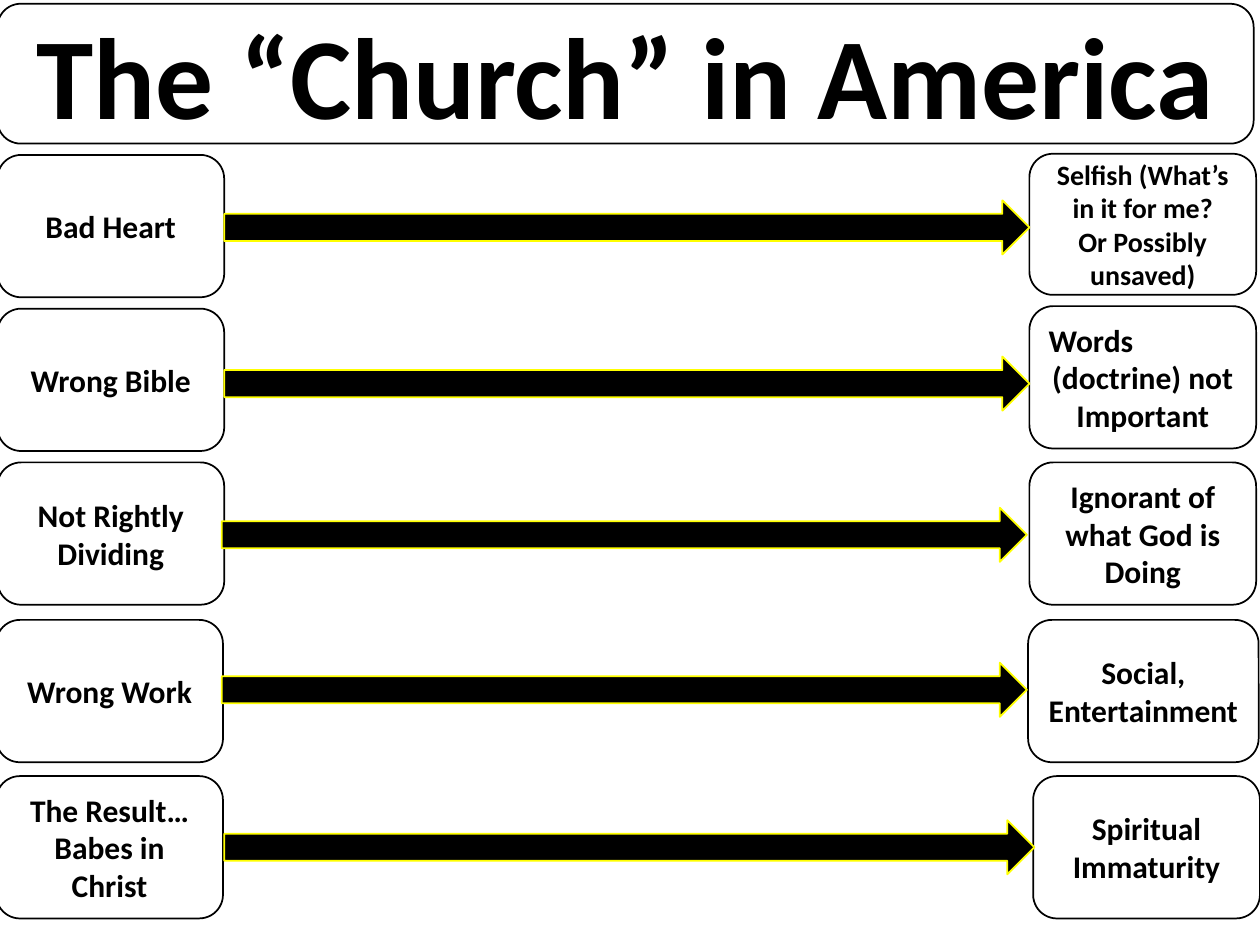
from dataclasses import dataclass

import pptx
import pptx.dml.color
import pptx.enum.shapes
import pptx.enum.text
import pptx.util
from pptx.util import Inches

Align = pptx.enum.text.PP_ALIGN
Preset = pptx.enum.shapes.MSO_SHAPE


@dataclass(frozen=True)
class Theme:
    font: str = "Calibri"
    ink: str = "000000"
    arrow_edge: str = "FFFF00"
    line_width: float = 1
    title_size: float = 66
    label_size: float = 18
    small_size: float = 16


@dataclass(frozen=True)
class Line:
    """One paragraph of a box."""
    text: str
    align: Align = Align.CENTER


@dataclass(frozen=True)
class Box:
    left: float
    top: float
    lines: tuple[Line, ...]
    size: float
    width: float = 1.8
    height: float = 1.13


@dataclass(frozen=True)
class Arrow:
    left: float
    top: float
    width: float = 6.39
    height: float = 0.43


@dataclass(frozen=True)
class Row:
    cause: Box
    arrow: Arrow
    effect: Box


THEME = Theme()


def label(left: float, top: float, *texts: str, width: float = 1.8) -> Box:
    return Box(left, top, tuple(Line(text) for text in texts), THEME.label_size, width)


TITLE = Box(-0.02, 0.03, (Line("The “Church” in America"),), THEME.title_size, 9.97, 1.11)

SELFISH = Box(
    8.17, 1.22,
    (Line("Selfish (What’s in it for me?"), Line("Or Possibly unsaved)")),
    THEME.small_size, height=1.12,
)
WORDS = Box(
    8.17, 2.43,
    (Line("Words", Align.LEFT), Line("(doctrine) not Important")),
    THEME.label_size,
)

ROWS = (
    Row(label(-0.02, 1.23, "Bad Heart"), Arrow(1.78, 1.59), SELFISH),
    Row(label(-0.02, 2.45, "Wrong Bible"), Arrow(1.78, 2.83), WORDS),
    Row(label(-0.02, 3.67, "Not Rightly Dividing"), Arrow(1.76, 4.03),
        label(8.17, 3.67, "Ignorant of what God is Doing")),
    Row(label(-0.03, 4.92, "Wrong Work"), Arrow(1.76, 5.26),
        label(8.16, 4.92, "Social, Entertainment", width=1.83)),
    Row(label(-0.03, 6.16, "The Result…", "Babes in Christ"), Arrow(1.78, 6.51, 6.43),
        label(8.2, 6.16, "Spiritual Immaturity")),
)


def rgb(value: str) -> pptx.dml.color.RGBColor:
    return pptx.dml.color.RGBColor.from_string(value)


def add_outlined_shape(slide, preset: Preset, place: Box | Arrow, line_color: str):
    shape = slide.shapes.add_shape(
        preset, Inches(place.left), Inches(place.top),
        Inches(place.width), Inches(place.height),
    )
    shape.shadow.inherit = False
    shape.line.color.rgb = rgb(line_color)
    shape.line.width = pptx.util.Pt(THEME.line_width)
    return shape


def add_box(slide, box: Box) -> None:
    shape = add_outlined_shape(slide, Preset.ROUNDED_RECTANGLE, box, THEME.ink)
    shape.fill.background()
    frame = shape.text_frame
    frame.word_wrap = True
    frame.vertical_anchor = pptx.enum.text.MSO_ANCHOR.MIDDLE
    frame.margin_top = frame.margin_bottom = 0
    for index, line in enumerate(box.lines):
        paragraph = frame.add_paragraph() if index else frame.paragraphs[0]
        paragraph.alignment = line.align
        run = paragraph.add_run()
        run.text = line.text
        run.font.name = THEME.font
        run.font.size = pptx.util.Pt(box.size)
        run.font.bold = True
        run.font.color.rgb = rgb(THEME.ink)


def add_arrow(slide, arrow: Arrow) -> None:
    shape = add_outlined_shape(slide, Preset.RIGHT_ARROW, arrow, THEME.arrow_edge)
    shape.fill.solid()
    shape.fill.fore_color.rgb = rgb(THEME.ink)


def main() -> None:
    presentation = pptx.Presentation()
    presentation.slide_width = Inches(10)
    presentation.slide_height = Inches(7.5)
    slide = presentation.slides.add_slide(presentation.slide_layouts[6])
    add_box(slide, TITLE)
    for row in ROWS:
        add_box(slide, row.cause)
        add_box(slide, row.effect)
        add_arrow(slide, row.arrow)
    presentation.save("out.pptx")


if __name__ == "__main__":
    main()
